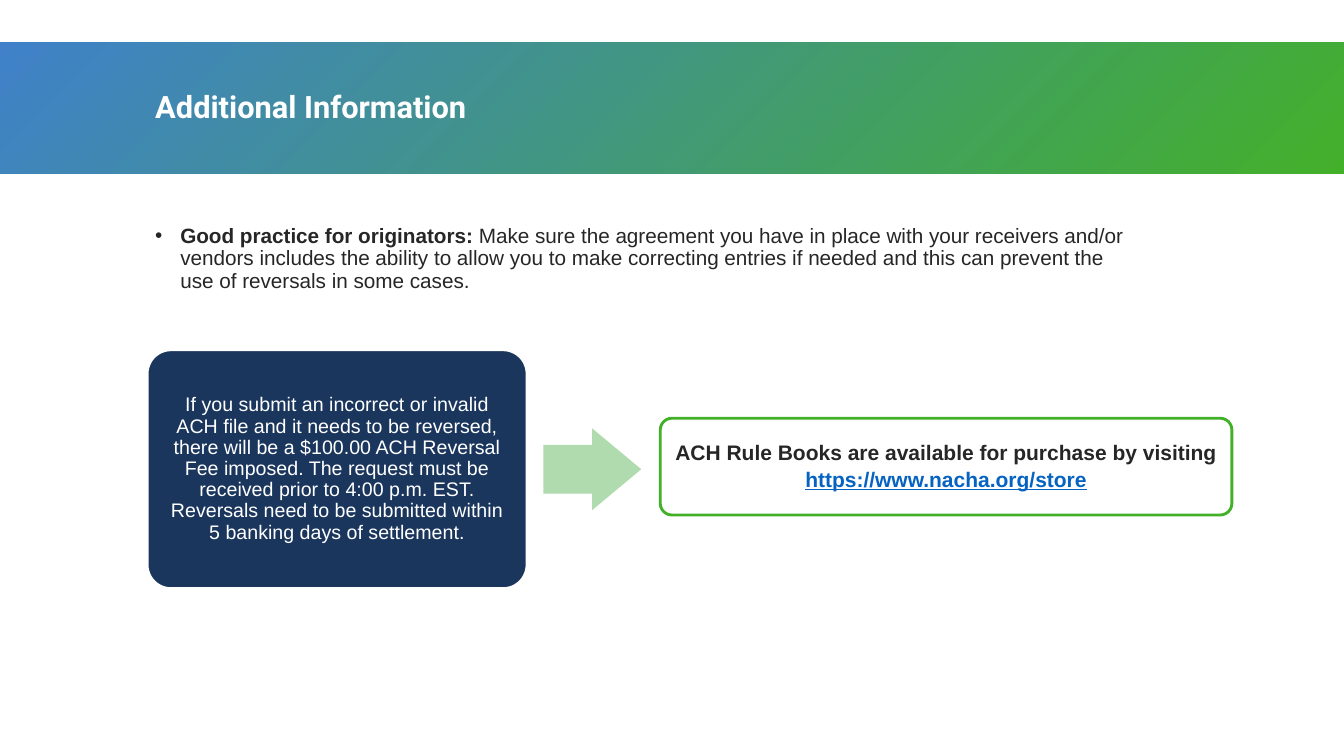
from dataclasses import dataclass

from lxml import etree
from pptx import Presentation
from pptx.dml.color import RGBColor
from pptx.enum.shapes import MSO_SHAPE
from pptx.enum.text import MSO_ANCHOR, MSO_AUTO_SIZE, PP_ALIGN
from pptx.oxml.ns import qn
from pptx.util import Inches, Pt

RECTANGLE = MSO_SHAPE.RECTANGLE
ROUNDED = MSO_SHAPE.ROUNDED_RECTANGLE
ARROW = MSO_SHAPE.RIGHT_ARROW
LEFT, CENTER = PP_ALIGN.LEFT, PP_ALIGN.CENTER
TOP, MIDDLE = MSO_ANCHOR.TOP, MSO_ANCHOR.MIDDLE
NO_AUTOFIT = MSO_AUTO_SIZE.NONE


@dataclass(frozen=True)
class Theme:
    white: str = "FFFFFF"
    ink: str = "262626"
    navy: str = "1B365D"
    blue: str = "4081C9"
    green: str = "43B02A"
    pale_green: str = "B0DBAE"
    link: str = "0563C1"
    heading_font: str = "Roboto"
    body_font: str = "Arial"
    title_size: float = 22
    body_size: float = 14.8
    card_size: float = 14
    frame_size: float = 15
    outline: float = 2.04


class SlideBuilder:
    """Places elements by percentages of the slide: left, top, width, height."""

    def __init__(self, presentation, theme):
        self.presentation = presentation
        self.theme = theme
        self.slide = presentation.slides.add_slide(presentation.slide_layouts[5])

    def area(self, left, top, width, height):
        slide_width = self.presentation.slide_width
        slide_height = self.presentation.slide_height
        return (int(slide_width * left / 100), int(slide_height * top / 100),
                int(slide_width * width / 100), int(slide_height * height / 100))

    def fill_text(self, shape, paragraphs, style, align=LEFT, anchor=TOP,
                  margins=(0.1, 0.05), spacing=0.9, gap=0, bullet=False):
        """Each paragraph is a list of (text, format changes) runs."""
        frame = shape.text_frame
        side, edge = map(Inches, margins)
        settings = {"word_wrap": True, "auto_size": NO_AUTOFIT, "vertical_anchor": anchor,
                    "margin_left": side, "margin_right": side,
                    "margin_top": edge, "margin_bottom": edge}
        for name, value in settings.items():
            setattr(frame, name, value)
        for index, runs in enumerate(paragraphs):
            paragraph = frame.add_paragraph() if index else frame.paragraphs[0]
            paragraph.alignment = align
            paragraph.line_spacing = spacing
            paragraph.space_before = Pt(gap if index else 0)
            if bullet:
                self.add_bullet(paragraph)
            for text, changes in runs:
                run = paragraph.add_run()
                run.text = text
                self.format_font(run.font, {**style, **changes})

    def add_bullet(self, paragraph):
        properties = paragraph._p.get_or_add_pPr()
        properties.set("marL", str(Inches(0.25)))
        properties.set("indent", str(Inches(-0.25)))
        etree.SubElement(properties, qn("a:buFont"), typeface=self.theme.body_font)
        etree.SubElement(properties, qn("a:buChar"), char="•")

    def format_font(self, font, style):
        for name, value in style.items():
            if name == "color":
                font.color.rgb = RGBColor.from_string(value)
            else:
                setattr(font, name, Pt(value) if name == "size" else value)

    def title(self, area, text, style):
        title = self.slide.shapes.title
        title.left, title.top, title.width, title.height = self.area(*area)
        self.slide.shapes._spTree.append(title._element)
        self.fill_text(title, [[(text, {})]], style, anchor=MIDDLE)

    def text(self, area, paragraphs, style, **layout):
        box = self.slide.shapes.add_textbox(*self.area(*area))
        self.fill_text(box, paragraphs, style, **layout)

    def shape(self, kind, area, fill=None, line=None, adjustments=()):
        shape = self.slide.shapes.add_shape(kind, *self.area(*area))
        shape.shadow.inherit = False
        for index, value in enumerate(adjustments):
            shape.adjustments[index] = value
        if fill:
            shape.fill.solid()
            shape.fill.fore_color.rgb = RGBColor.from_string(fill)
        else:
            shape.fill.background()
        if line:
            shape.line.color.rgb = RGBColor.from_string(line)
            shape.line.width = Pt(self.theme.outline)
        else:
            shape.line.fill.background()
        return shape

    def gradient_band(self, area, colors):
        band = self.shape(RECTANGLE, area)
        band.fill.gradient()
        band.fill.gradient_angle = 315
        for stop, color in zip(band.fill.gradient_stops, colors):
            stop.color.rgb = RGBColor.from_string(color)


def main():
    theme = Theme()
    presentation = Presentation()
    presentation.slide_width = Inches(13.33)
    presentation.slide_height = Inches(7.5)
    builder = SlideBuilder(presentation, theme)

    # Header band and title
    builder.gradient_band((0, 5.6, 100, 17.33), (theme.blue, theme.green))
    builder.title((10.8, 10.4, 51.5, 7.87), "Additional Information",
                  {"name": theme.heading_font, "size": theme.title_size,
                   "color": theme.white, "bold": True})

    # Advice for originators
    body = {"name": theme.body_font, "size": theme.body_size, "color": theme.ink}
    advice = [
        ("Good practice for originators: ", {"bold": True}),
        ("Make sure the agreement you have in place with your receivers and/or vendors "
         "includes the ability to allow you to make correcting entries if needed and "
         "this can prevent the use of reversals in some cases.", {}),
    ]
    builder.text((10.8, 29.2, 74.4, 10.8), [advice], body, bullet=True)

    # Reversal fee card
    card = builder.shape(ROUNDED, (10.95, 46.27, 28.27, 31.6), fill=theme.navy,
                         line=theme.white, adjustments=[0.1])
    fee = ("If you submit an incorrect or invalid ACH file and it needs to be reversed, "
           "there will be a $100.00 ACH Reversal Fee imposed. The request must be "
           "received prior to 4:00 p.m. EST. Reversals need to be submitted within "
           "5 banking days of settlement.")
    builder.fill_text(card, [[(fee, {})]],
                      {**body, "size": theme.card_size, "color": theme.white},
                      align=CENTER, anchor=MIDDLE, margins=(0.15, 0.04))

    # Arrow to the rule books
    builder.shape(ARROW, (40.43, 56.67, 7.28, 10.8), fill=theme.pale_green,
                  adjustments=[0.6, 0.6])

    # Rule books frame
    frame = builder.shape(ROUNDED, (49.13, 55.33, 42.53, 12.8), line=theme.green,
                          adjustments=[0.12])
    rule_books = [
        [("ACH Rule Books are available for purchase by visiting", {})],
        [("https://www.nacha.org/store", {"color": theme.link, "underline": True})],
    ]
    builder.fill_text(frame, rule_books, {**body, "size": theme.frame_size, "bold": True},
                      align=CENTER, anchor=MIDDLE, margins=(0, 0.04),
                      spacing=Pt(16.2), gap=3)

    presentation.save("out.pptx")


if __name__ == "__main__":
    main()
